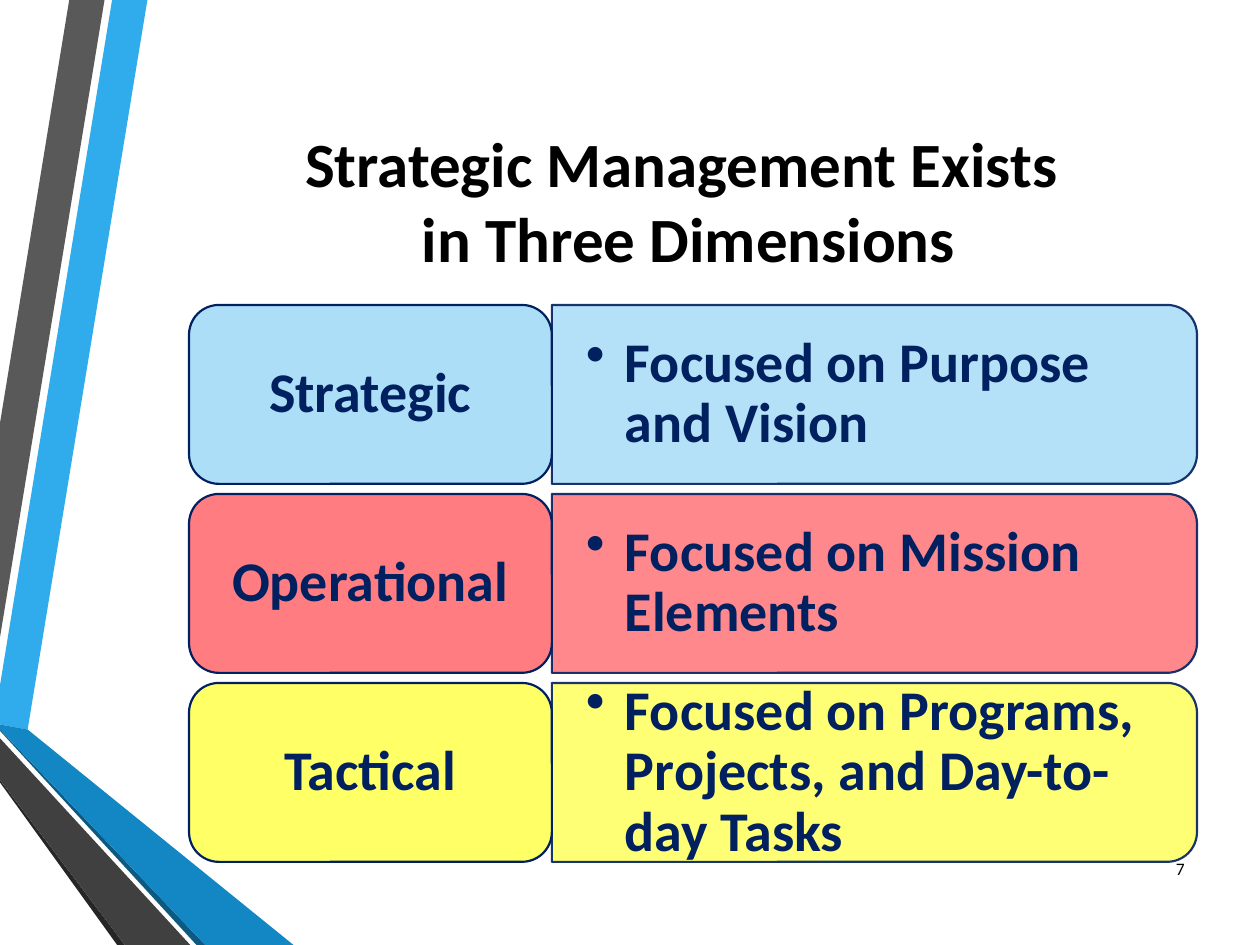
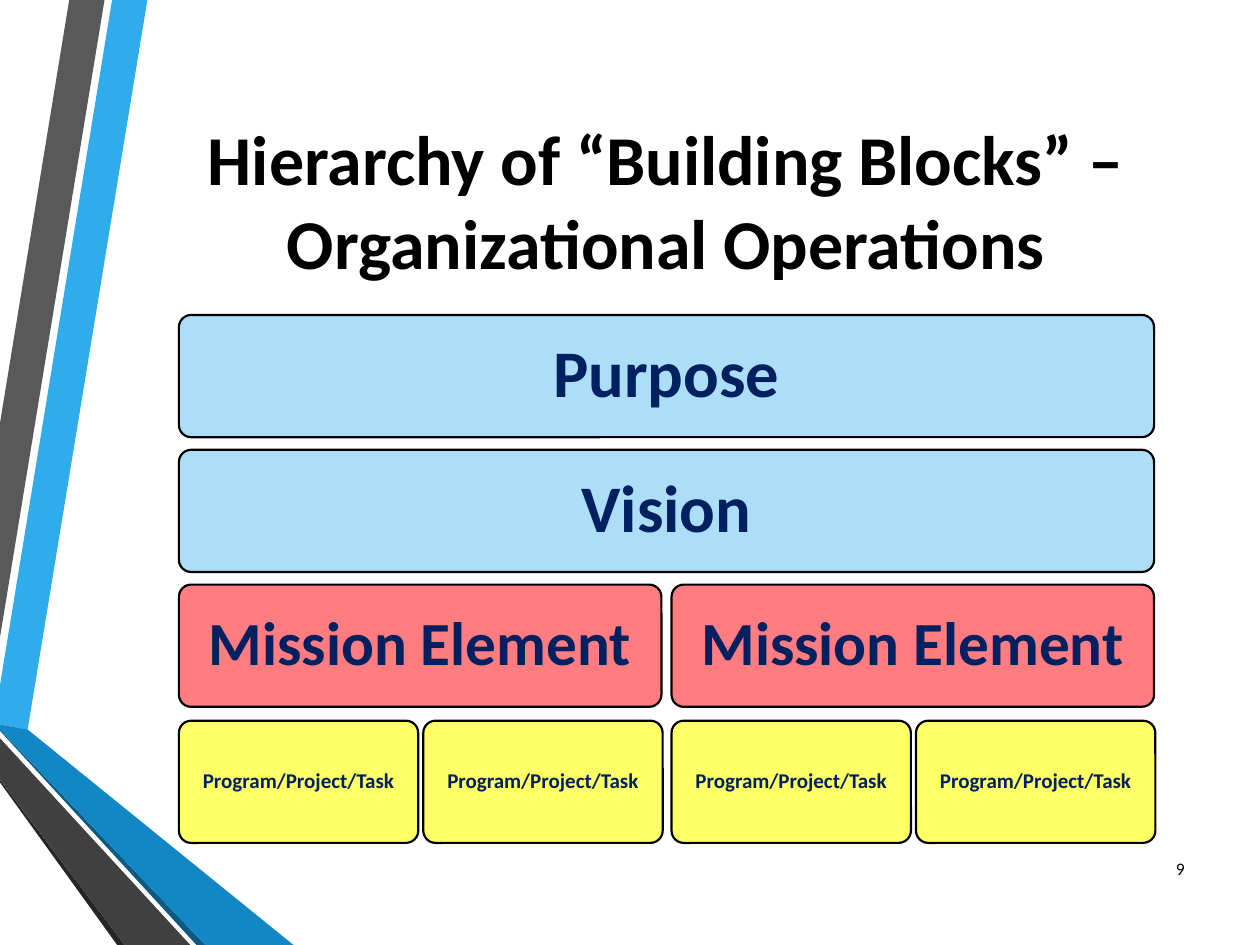
import pptx
import pptx.util
import pptx.dml.color
import pptx.enum.shapes
import pptx.enum.text
import pptx.oxml
import pptx.oxml.ns

PX = 9144  # EMU per px, 100 px to the inch
FONT = "Calibri"
COLORS = {
    "black": "000000", "navy": "002060",
    "sky": "ACDEF7", "coral": "FF7C80", "yellow": "FFFF66",
    "blue": "30ACEC", "gray": "595959", "soot": "262626",
    "petrol": "0C5A82", "ocean": "1287C3", "charcoal": "404040",
}
RIBBONS = [
    ("blue", [(0, 544), (0, 575), (22, 579), (117, 0), (89, 0)]),
    ("gray", [(83, 0), (55, 0), (0, 336), (0, 506)]),
    ("soot", [(0, 619), (0, 621), (93, 750), (99, 750)]),
    ("petrol", [(0, 579), (0, 580), (156, 750), (163, 750)]),
    ("ocean", [(0, 579), (163, 750), (233, 750), (22, 579), (0, 575)]),
    ("charcoal", [(0, 619), (99, 750), (151, 750), (0, 586)]),
]
SHAPE = pptx.enum.shapes.MSO_SHAPE
ALIGN = pptx.enum.text.PP_ALIGN


def px(*lengths):
    return [pptx.util.Emu(n * PX) for n in lengths]


def rgb(name):
    return pptx.dml.color.RGBColor.from_string(COLORS[name])


def add_alpha(fill_parent, percent):
    for color in fill_parent.iter(pptx.oxml.ns.qn("a:srgbClr")):
        color.append(pptx.oxml.parse_xml(
            f'<a:alpha {pptx.oxml.ns.nsdecls("a")} val="{percent * 1000}"/>'))


class Deck:
    def __init__(self):
        self.prs = pptx.Presentation()
        self.prs.slide_width, self.prs.slide_height = px(1000, 750)
        self.s = None

    def slide(self, title, left, size, number):
        self.s = self.prs.slides.add_slide(self.prs.slide_layouts[5])
        for color, points in RIBBONS:
            self.ribbon(color, points)
        sp = self.s.shapes.title
        sp.left, sp.top, sp.width, sp.height = px(left, 50, 843, 217)
        self.text(sp, title, size, "black", bold=True)
        self.textbox(str(number), (905, 669, 45, 40), 10, "black",
                     bold=False, align=ALIGN.RIGHT)

    def ribbon(self, color, points):
        builder = self.s.shapes.build_freeform(*points[0], scale=PX)
        builder.add_line_segments(points[1:], close=True)
        sp = builder.convert_to_shape()
        self.paint(sp, color)

    def paint(self, sp, color, line=None):
        sp.shadow.inherit = False
        sp.fill.solid()
        sp.fill.fore_color.rgb = rgb(color)
        if line:
            sp.line.color.rgb = rgb(line)
            sp.line.width = pptx.util.Pt(1.25)
        else:
            sp.line.fill.background()

    def text(self, sp, text, size, color, bold=True, align=ALIGN.CENTER,
             insets=(10, 5), spacing=None):
        tf = sp.text_frame
        tf.text = text
        tf.word_wrap = True
        tf.auto_size = pptx.enum.text.MSO_AUTO_SIZE.NONE
        tf.vertical_anchor = pptx.enum.text.MSO_ANCHOR.MIDDLE
        tf.margin_left, tf.margin_top = px(*insets)
        tf.margin_right, tf.margin_bottom = px(*insets)
        p = tf.paragraphs[0]
        p.alignment = align
        p.line_spacing = spacing
        for r in p.runs:
            r.font.name, r.font.size, r.font.bold = FONT, pptx.util.Pt(size), bold
            r.font.color.rgb = rgb(color)

    def textbox(self, text, box, size, color, **style):
        sp = self.s.shapes.add_textbox(*px(*box))
        self.text(sp, text, size, color, **style)
        return sp

    def bullet(self, text, box, size):
        sp = self.textbox(text, box, size, "navy", align=ALIGN.LEFT,
                          insets=(27, 14), spacing=0.9)
        pPr = sp.text_frame.paragraphs[0]._p.get_or_add_pPr()
        pPr.set("marL", str(31 * PX))
        pPr.set("indent", str(-31 * PX))
        pPr.append(pptx.oxml.parse_xml(
            f'<a:buChar {pptx.oxml.ns.nsdecls("a")} char="•"/>'))

    def block(self, text, box, size, color, line, insets, corner=None):
        sp = self.s.shapes.add_shape(SHAPE.ROUNDED_RECTANGLE, *px(*box))
        if corner:
            sp.adjustments[0] = corner
        self.paint(sp, color, line)
        self.text(sp, text, size, "navy", insets=insets, spacing=0.9)

    def panel(self, box, color):
        """Translucent box with rounded right corners, a quarter turn."""
        left, top, w, h = box
        shift = (w - h) // 2
        sp = self.s.shapes.add_shape(
            SHAPE.ROUND_2_SAME_RECTANGLE, *px(left + shift, top - shift, h, w))
        sp.rotation = 90
        self.paint(sp, color, "navy")
        add_alpha(sp._element.spPr, 90)


def three_dimensions(deck):
    deck.slide("Strategic Management Exists \vin Three Dimensions", 125, 36, 7)
    rows = [
        ("Strategic", "Focused on Purpose and Vision", "sky"),
        ("Operational", "Focused on Mission Elements", "coral"),
        ("Tactical", "Focused on Programs, Projects, and Day-to-day Tasks", "yellow"),
    ]
    for i, (name, focus, color) in enumerate(rows):
        top = 242 + 150 * i
        deck.panel((438, top, 512, 142), color)
        deck.bullet(focus, (438, top + 7, 505, 128), 32)
        deck.block(name, (150, top, 288, 142), 32, color, "navy", (13, 7))


def building_blocks(deck):
    deck.slide("Hierarchy of “Building Blocks” – Organizational Operations", 107, 40, 9)
    left, half, quarter = 142, 391, 194  # left edge and column steps
    halves = [left, left + half]
    quarters = [x + step for x in halves for step in (0, quarter)]
    tiers = [
        ("Purpose", [left], 774, 38, "sky"),
        ("Vision", [left], 774, 38, "sky"),
        ("Mission Element", halves, 383, 35, "coral"),
        ("Program/Project/Task", quarters, 190, 12, "yellow"),
    ]
    for i, (name, lefts, width, size, color) in enumerate(tiers):
        top = 250 + 322 * i // 3
        for x in lefts:
            deck.block(name, (x, top, width, 97), size, color, "black", (5, 5), 0.1)


def main():
    deck = Deck()
    three_dimensions(deck)
    building_blocks(deck)
    deck.prs.save("out.pptx")


if __name__ == "__main__":
    main()
